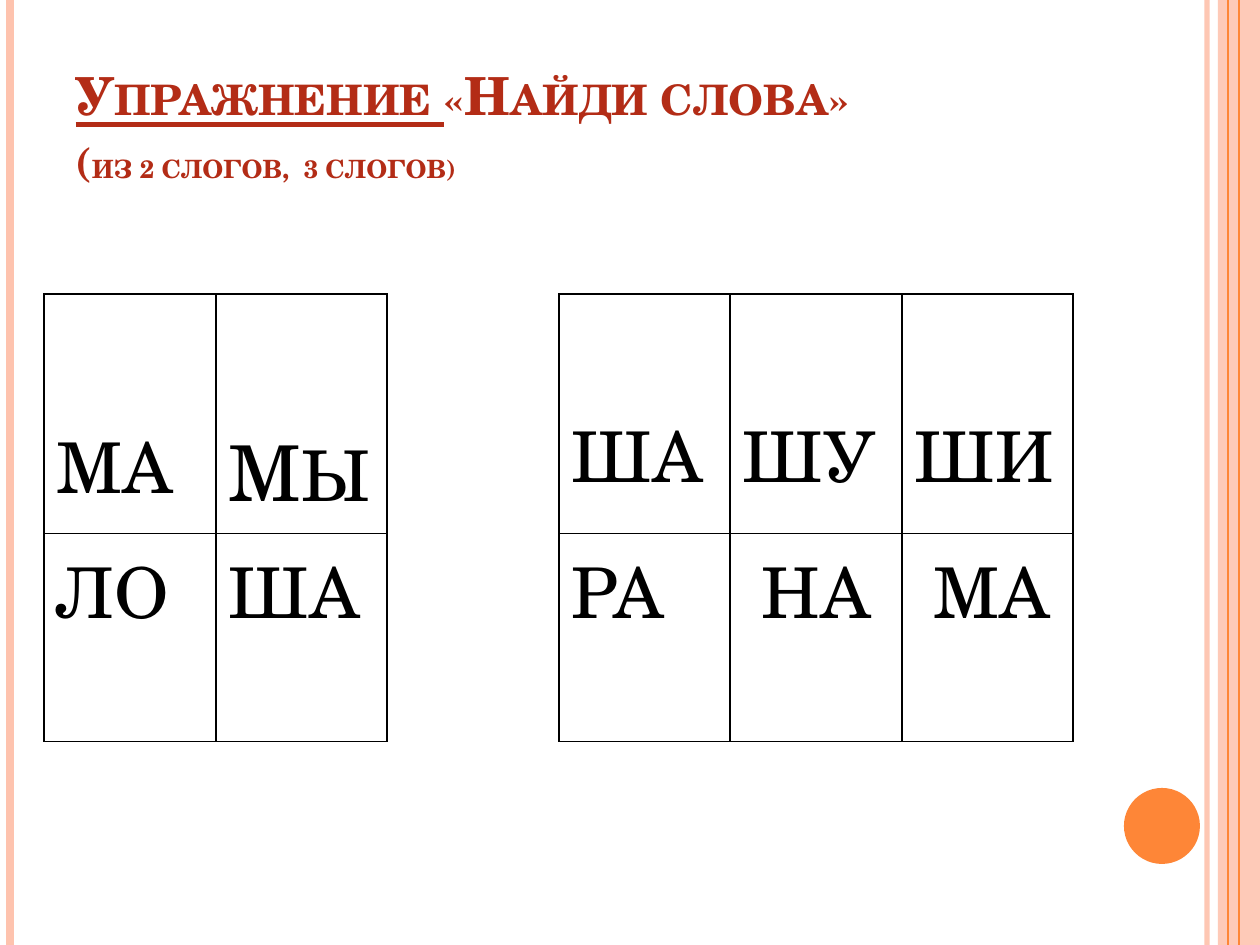
from copy import deepcopy
from dataclasses import dataclass

from lxml.etree import SubElement
from pptx import Presentation
from pptx.dml.color import RGBColor
from pptx.enum.shapes import MSO_CONNECTOR, MSO_SHAPE
from pptx.enum.text import MSO_ANCHOR, MSO_AUTO_SIZE, PP_ALIGN
from pptx.oxml import parse_xml
from pptx.oxml.ns import nsdecls, qn
from pptx.util import Emu, Pt

PX_PER_INCH = 126
SLIDE_W, SLIDE_H = 1260, 945
FONT = "TeX Gyre Schola"
BLACK = RGBColor(0x00, 0x00, 0x00)
RED = RGBColor(0xB3, 0x2C, 0x16)
PEACH = RGBColor(0xFE, 0xC3, 0xAE)
ORANGE = RGBColor(0xFE, 0x86, 0x37)


@dataclass(frozen=True)
class Stripe:
    x: int
    color: RGBColor
    width: float
    opacity: int = 100


@dataclass(frozen=True)
class Syllable:
    """Text pieces with their sizes, and the cell's top and left margins."""
    pieces: tuple[tuple[str, int], ...]
    top: int = 6
    left: int = 13


LOW, LOWER, INDENT = 109, 120, 32
STRIPES = (
    Stripe(1207, PEACH, 3, 93),
    Stripe(10, PEACH, 4.5),
    Stripe(1239, ORANGE, 1.5),
    Stripe(1228, ORANGE, 0.75),
)
SYLLABLES = (
    (
        Syllable((("МА", 40),), LOWER),
        Syllable((("М", 44), ("Ы", 40)), LOWER),
        None,
        Syllable((("ША", 40),), LOW),
        Syllable((("ШУ", 40),), LOW),
        Syllable((("ШИ", 40),), LOW),
    ),
    (
        Syllable((("ЛО", 40),)),
        Syllable((("ША", 40),)),
        None,
        Syllable((("РА", 40),)),
        Syllable((("НА", 40),), left=INDENT),
        Syllable((("МА", 40),), left=INDENT),
    ),
)
COLUMN_WIDTHS = (172, 171) * 3
ROW_HEIGHTS = (218, 208)


def px(length: int) -> Emu:
    return Emu(round(length * 914400 / PX_PER_INCH))


def set_opacity(color_parent, percent: int) -> None:
    color = color_parent.find(".//" + qn("a:srgbClr"))
    SubElement(color, qn("a:alpha"), val=str(percent * 1000))


def add_run(paragraph, text: str, size: int, color: RGBColor):
    run = paragraph.add_run()
    run.text = text
    run.font.name = FONT
    run.font.size = Pt(size)
    run.font.color.rgb = color
    return run


def draw_stripe(slide, stripe: Stripe) -> None:
    x = px(stripe.x)
    line = slide.shapes.add_connector(MSO_CONNECTOR.STRAIGHT, x, 0, x, px(SLIDE_H))
    line.line.color.rgb = stripe.color
    line.line.width = Pt(stripe.width)
    properties = line._element.spPr
    if stripe.opacity < 100:
        set_opacity(properties, stripe.opacity)
    SubElement(properties, qn("a:effectLst"))


def draw_solid(slide, kind, box: tuple[int, int, int, int], color: RGBColor):
    solid = slide.shapes.add_shape(kind, *map(px, box))
    solid.shadow.inherit = False
    solid.fill.solid()
    solid.fill.fore_color.rgb = color
    solid.line.fill.background()
    return solid


def write_title(slide) -> None:
    title = slide.shapes.title
    title.left, title.top, title.width, title.height = map(px, (63, 38, 1029, 157))
    frame = title.text_frame
    frame.word_wrap = True
    frame.auto_size = MSO_AUTO_SIZE.NONE
    frame.vertical_anchor = MSO_ANCHOR.BOTTOM
    heading = frame.paragraphs[0]
    heading.alignment = PP_ALIGN.LEFT

    def add_title_run(text: str, size: int, underline: bool = False):
        run = add_run(heading, text, size, RED)
        run.font.bold = True
        run.font.underline = underline
        run.font._element.set("cap", "small")
        return run

    add_title_run("Упражнение ", 30, underline=True)
    exercise = add_title_run("«Найди слова»", 30)
    heading.add_line_break()
    # The break takes the heading's format so that it keeps the line height.
    heading._p[-1].append(deepcopy(exercise.font._element))
    add_title_run("(", 30)
    add_title_run("из 2 слогов,  3 слогов)", 18)


def set_borders(cell, visible_sides: str) -> None:
    properties = cell._tc.get_or_add_tcPr()
    for position, side in enumerate("LRTB"):
        paint = (f'<a:solidFill><a:srgbClr val="{BLACK}"/></a:solidFill>'
                 if side in visible_sides else "<a:noFill/>")
        border = f'<a:ln{side} {nsdecls("a")} w="{Pt(1)}">{paint}</a:ln{side}>'
        properties.insert(position, parse_xml(border))


def fill_cell(cell, syllable: Syllable | None) -> None:
    cell.fill.background()
    set_borders(cell, "LRTB" if syllable else "LR")
    if syllable:
        cell.margin_top = px(syllable.top)
        cell.margin_left = px(syllable.left)
        for text, size in syllable.pieces:
            add_run(cell.text_frame.paragraphs[0], text, size, BLACK)


def draw_syllable_table(slide) -> None:
    frame = slide.shapes.add_table(
        len(ROW_HEIGHTS), len(COLUMN_WIDTHS), px(44), px(294),
        px(sum(COLUMN_WIDTHS)), px(sum(ROW_HEIGHTS)))
    table = frame.table
    table.first_row = False
    table.horz_banding = False
    for column, width in zip(table.columns, COLUMN_WIDTHS):
        column.width = px(width)
    for row, height, syllables in zip(table.rows, ROW_HEIGHTS, SYLLABLES):
        row.height = px(height)
        for cell, syllable in zip(row.cells, syllables):
            fill_cell(cell, syllable)


def main() -> None:
    deck = Presentation()
    deck.slide_width, deck.slide_height = px(SLIDE_W), px(SLIDE_H)
    slide = deck.slides.add_slide(deck.slide_layouts[5])
    band = draw_solid(slide, MSO_SHAPE.RECTANGLE, (1218, 0, 42, SLIDE_H), PEACH)
    set_opacity(band._element.spPr, 87)
    for stripe in STRIPES:
        draw_stripe(slide, stripe)
    draw_solid(slide, MSO_SHAPE.OVAL, (1124, 788, 76, 76), ORANGE)
    write_title(slide)
    draw_syllable_table(slide)
    deck.save("out.pptx")


if __name__ == "__main__":
    main()
